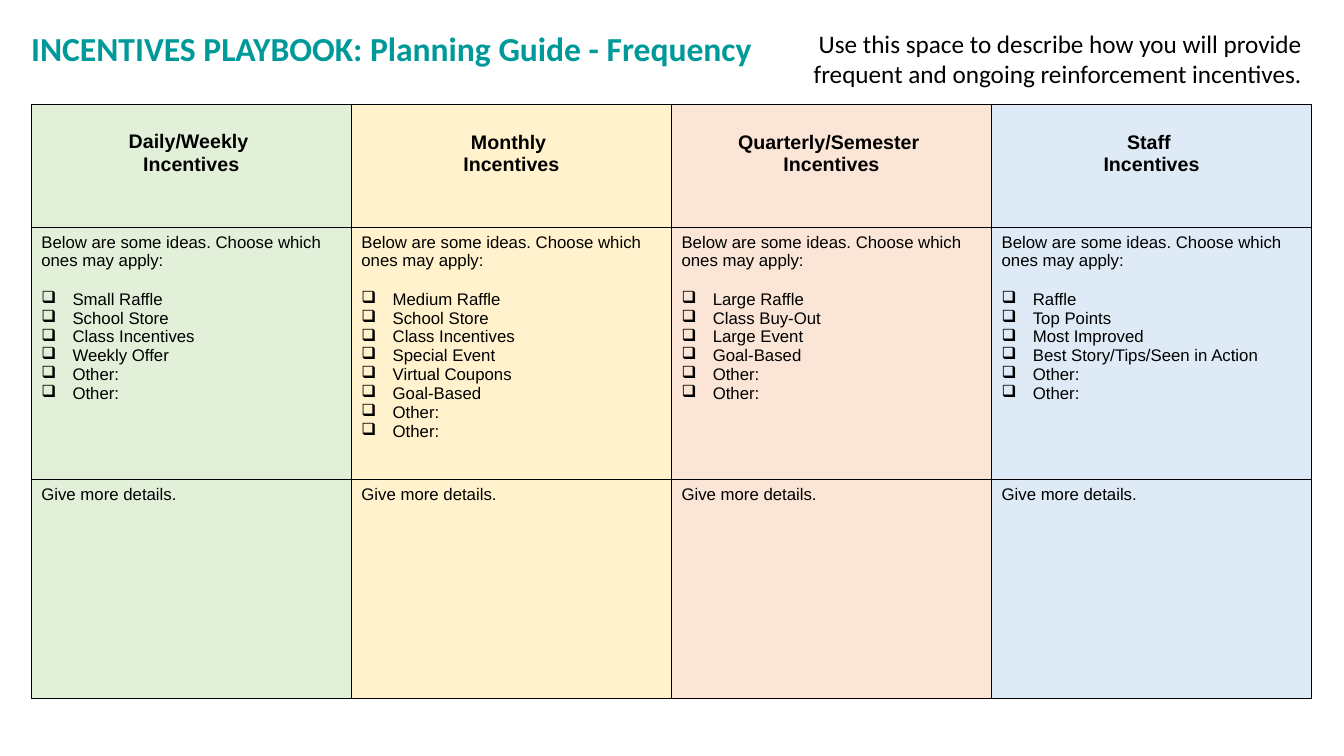
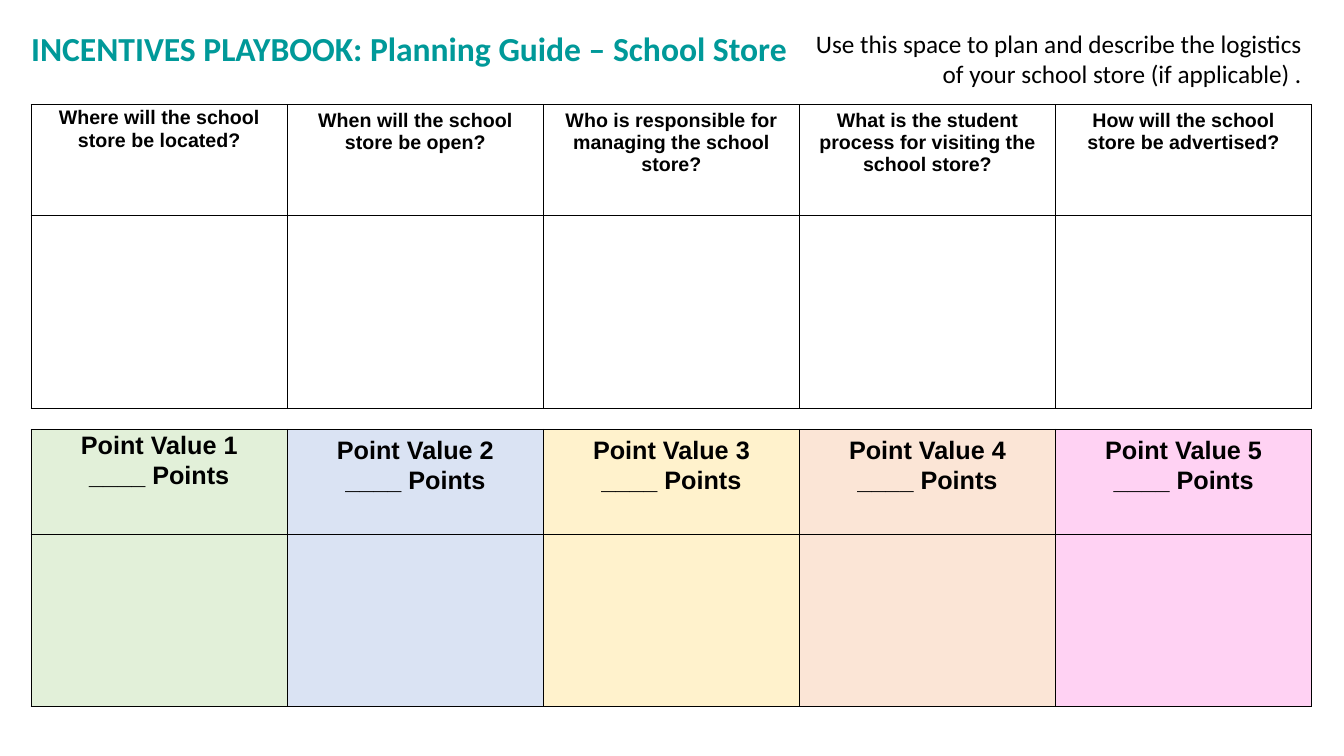
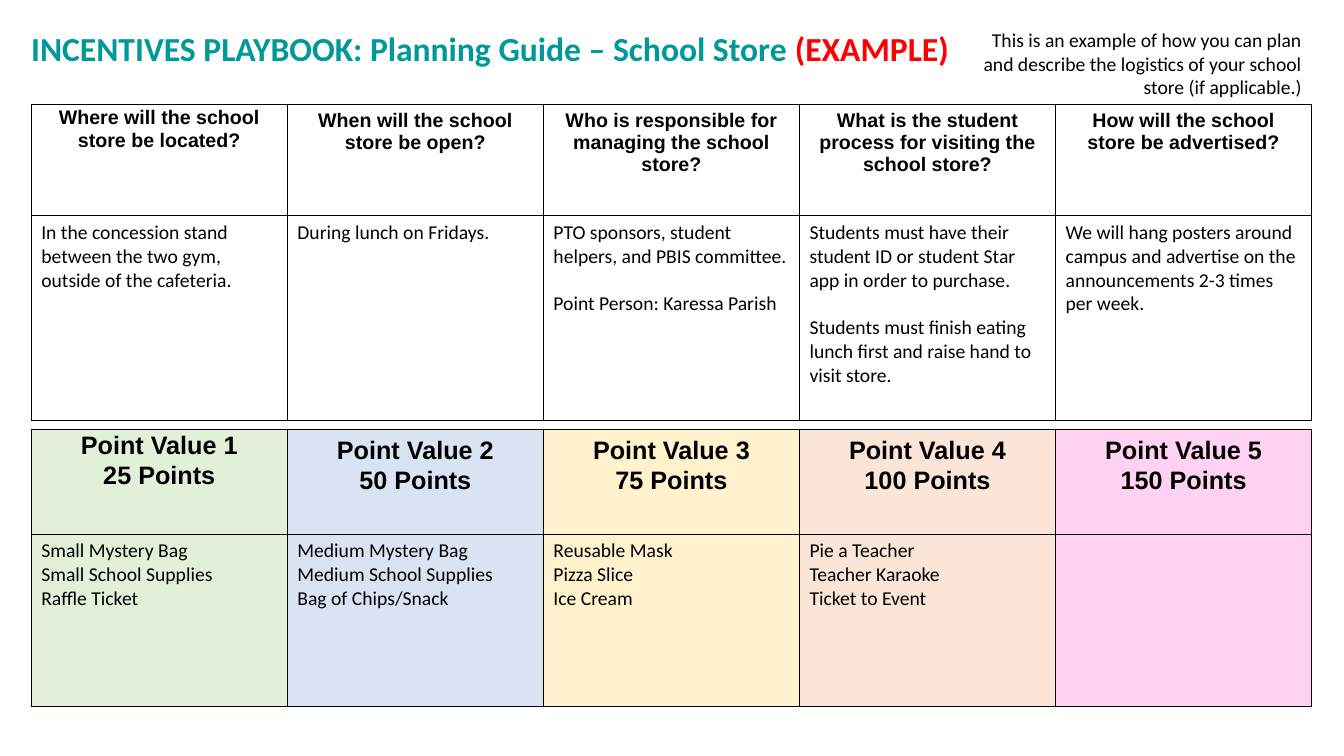
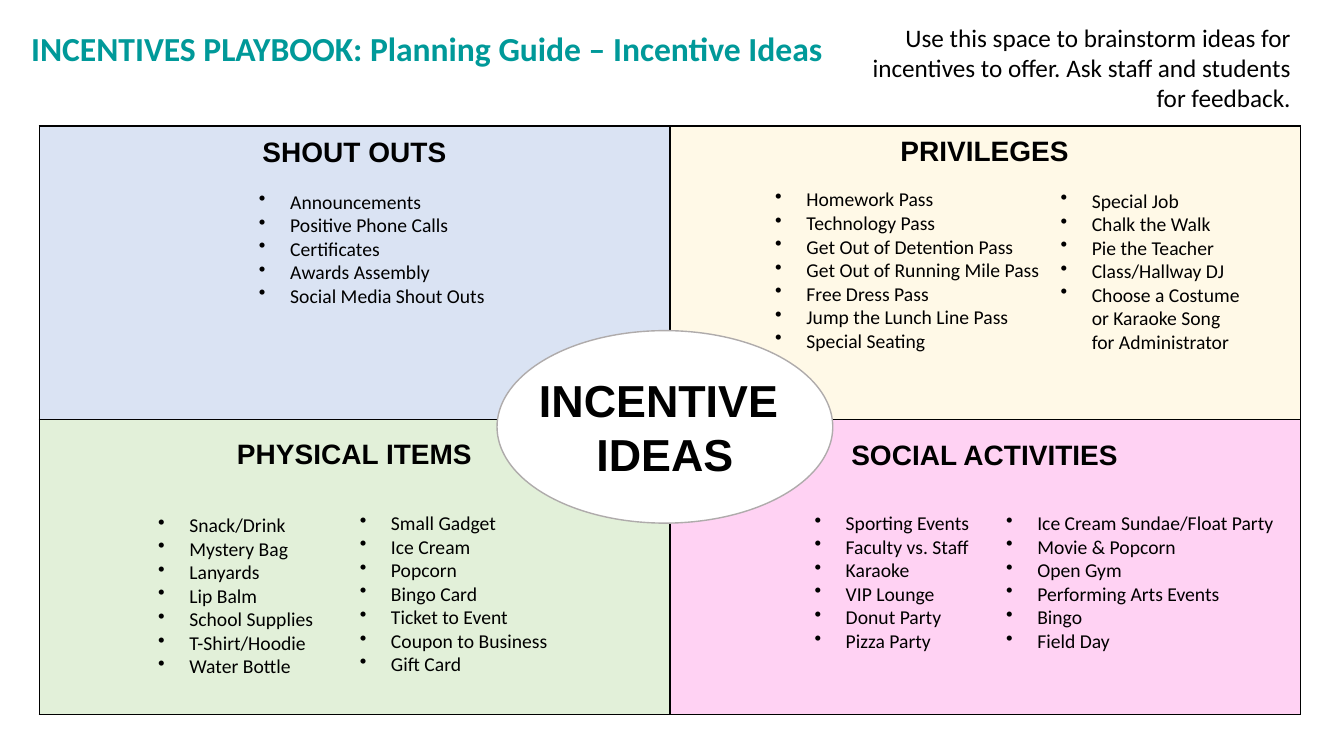
from lxml import etree
from pptx import Presentation
from pptx.dml.color import RGBColor
from pptx.enum import shapes, text
from pptx.oxml import ns
from pptx.util import Inches, Pt

# Shared look
WIDTH, HEIGHT = 13.33, 7.5
COLORS = {"teal": "009999", "red": "FF0000", "black": "000000", "white": "FFFFFF",
          "grey": "AFABAB", "green": "E2F0D9", "yellow": "FFF2CC", "peach": "FBE5D6",
          "sky": "DEEBF7", "blue": "DAE3F3", "pink": "FF33CC", "gold": "FFE699"}
OPACITY = {"pink": 22, "gold": 23}
LEFT, CENTER, RIGHT = text.PP_ALIGN.LEFT, text.PP_ALIGN.CENTER, text.PP_ALIGN.RIGHT
INDENT = 0.31
TABLE_LEFT, TABLE_TOP, TABLE_WIDTH = 0.31, 1.04, 12.7
CELL_MARGINS = (0.1, 0.05, 0.1, 0.05)
FIRST_MARGINS = (0.07, 0, 0.07, 0)


def style(name, size, bold=False, color="black", align=LEFT, spacing=None, gap=0, bullet=None):
    return {"font": {"name": name, "size": Pt(size), "bold": bold}, "color": color,
            "para": {"alignment": align, "line_spacing": spacing, "space_after": Pt(gap)},
            "bullet": bullet}


TITLE = style("Calibri", 24, True, "teal")
EXAMPLE = style("Calibri", 24, True, "red")
GUIDE = style("Calibri", 18, align=RIGHT)
SMALL_GUIDE = style("Calibri", 14, align=RIGHT)
HEADER = style("Arial", 14, True, align=CENTER)
LOOSE_HEADER = style("Arial", 14, True, align=CENTER, spacing=1.07)
POINTS = style("Arial", 18, True, align=CENTER, spacing=1.07)
INTRO = style("Arial", 12, gap=14)
DETAIL = style("Arial", 12)
CHECK = style("Arial", 12, bullet="❑")
ANSWER = style("Calibri", 14, gap=17)
PRIZE = style("Calibri", 14)
IDEA = style("Calibri", 14, bullet="•")
QUADRANT = style("Arial", 20, True, align=CENTER)
HUB = style("Arial", 32, True, align=CENTER)

# Content
TITLE_START = "INCENTIVES PLAYBOOK: Planning Guide "
FREQUENCIES = [
    ("Daily/Weekly ", "green", ["Small Raffle", "School Store", "Class Incentives", "Weekly Offer"]),
    ("Monthly ", "yellow", ["Medium Raffle", "School Store", "Class Incentives", "Special Event",
                            "Virtual Coupons", "Goal-Based"]),
    ("Quarterly/Semester ", "peach", ["Large Raffle", "Class Buy-Out", "Large Event", "Goal-Based"]),
    ("Staff ", "sky", ["Raffle", "Top Points", "Most Improved", "Best Story/Tips/Seen in Action"]),
]
QUESTIONS = ["Where will the school store be located?", "When will the school store be open?",
             "Who is responsible for managing the school store?",
             "What is the student process for visiting the school store?",
             "How will the school store be advertised?"]
ANSWERS = [
    ["In the concession stand between the two gym, outside of the cafeteria."],
    ["During lunch on Fridays."],
    ["PTO sponsors, student helpers, and PBIS committee.", "Point Person: Karessa Parish"],
    ["Students must have their student ID or student Star app in order to purchase.",
     "Students must finish eating lunch first and raise hand to visit store."],
    ["We will hang posters around campus and advertise on the announcements 2-3 times per week."],
]
POINT_FILLS = ["green", "blue", "yellow", "peach", "pink"]
PRIZES = [
    ["Small Mystery Bag", "Small School Supplies", "Raffle Ticket"],
    ["Medium Mystery Bag", "Medium School Supplies", "Bag of Chips/Snack"],
    ["Reusable Mask", "Pizza Slice", "Ice Cream"],
    ["Pie a Teacher", "Teacher Karaoke", "Ticket to Event"],
    [],
]
EMPTY = [[] for _ in QUESTIONS]
STORES = [
    {"title": "– School Store", "example": "", "question_rows": (1.1, 1.91),
     "guide": "Use this space to plan and describe the logistics of your school store (if applicable) .",
     "guide_style": GUIDE, "guide_box": (7.74, 0.23, 5.27, 0.71),
     "answers": EMPTY, "points": ["____"] * 5, "prizes": EMPTY},
    {"title": "– School Store ", "example": "(EXAMPLE)", "question_rows": (1.1, 2.03),
     "guide": "This is an example of how you can plan and describe the logistics of your "
              "school store (if applicable.)",
     "guide_style": SMALL_GUIDE, "guide_box": (9.43, 0.23, 3.58, 0.81),
     "answers": ANSWERS, "points": [25, 50, 75, 100, 150], "prizes": PRIZES},
]
QUADRANT_FILLS = [["blue", "gold"], ["green", "pink"]]
QUADRANTS = [("SHOUT OUTS", 0.39, 1.29), ("PRIVILEGES", 6.64, 1.28),
             ("PHYSICAL ITEMS", 0.39, 4.28), ("SOCIAL ACTIVITIES", 6.64, 4.29)]
IDEA_LISTS = [  # left, top, width, ideas
    (2.47, 1.83, 2.72, ["Announcements", "Positive Phone Calls", "Certificates", "Awards Assembly",
                        "Social Media Shout Outs"]),
    (7.59, 1.81, 2.89, ["Homework Pass", "Technology Pass", "Get Out of Detention Pass",
                        "Get Out of Running Mile Pass", "Free Dress Pass",
                        "Jump the Lunch Line Pass", "Special Seating"]),
    (10.42, 1.82, 2.01, ["Special Job", "Chalk the Walk", "Pie the Teacher", "Class/Hallway DJ",
                         "Choose a Costume or Karaoke Song for Administrator"]),
    (1.47, 5.04, 2.01, ["Snack/Drink", "Mystery Bag", "Lanyards", "Lip Balm", "School Supplies",
                        "T-Shirt/Hoodie", "Water Bottle"]),
    (3.47, 5.02, 2.33, ["Small Gadget", "Ice Cream", "Popcorn", "Bingo Card", "Ticket to Event",
                        "Coupon to Business", "Gift Card"]),
    (9.88, 5.02, 2.9, ["Ice Cream Sundae/Float Party", "Movie & Popcorn", "Open Gym",
                       "Performing Arts Events", "Bingo", "Field Day"]),
    (7.98, 5.02, 2.01, ["Sporting Events", "Faculty vs. Staff", "Karaoke", "VIP Lounge",
                        "Donut Party", "Pizza Party"]),
]


# Text
def rgb(color):
    return RGBColor.from_string(COLORS[color])


def styled(lines, look):
    return [(line, look) for line in lines]


def add_span(para, words, look):
    span = para.add_run()
    span.text = words
    for key, value in look["font"].items():
        setattr(span.font, key, value)
    span.font.color.rgb = rgb(look["color"])


def write(frame, lines):
    for index, (words, look) in enumerate(lines):
        para = frame.add_paragraph() if index else frame.paragraphs[0]
        for key, value in look["para"].items():
            setattr(para, key, value)
        if look["bullet"]:
            props = para._p.get_or_add_pPr()
            props.set("marL", str(Inches(INDENT)))
            props.set("indent", str(-Inches(INDENT)))
            etree.SubElement(props, ns.qn("a:buChar")).set("char", look["bullet"])
        add_span(para, words, look)


def add_text(page, box, lines):
    frame = page.shapes.add_textbox(*map(Inches, box)).text_frame
    frame.word_wrap = True
    write(frame, lines)
    return frame


def add_page(deck, title, guide, guide_box, guide_style=GUIDE, example=""):
    page = deck.slides.add_slide(deck.slide_layouts[6])
    frame = add_text(page, (0.21, 0.23, 12.81, 0.81), [(TITLE_START + title, TITLE)])
    if example:
        add_span(frame.paragraphs[0], example, EXAMPLE)
    add_text(page, guide_box, [(guide, guide_style)])
    return page


# Tables: each cell is (lines, fill, margins)
def draw_cell(cell, lines, fill=None, margins=CELL_MARGINS):
    props = cell._tc.get_or_add_tcPr()
    for side in ("lnL", "lnR", "lnT", "lnB"):
        border = etree.SubElement(props, ns.qn("a:" + side), w=str(Pt(1)))
        solid = etree.SubElement(border, ns.qn("a:solidFill"))
        etree.SubElement(solid, ns.qn("a:srgbClr"), val=COLORS["black"])
    if fill:
        cell.fill.solid()
        cell.fill.fore_color.rgb = rgb(fill)
        if fill in OPACITY:
            tint = props.find(ns.qn("a:solidFill")).find(ns.qn("a:srgbClr"))
            etree.SubElement(tint, ns.qn("a:alpha"), val=str(OPACITY[fill] * 1000))
    else:
        cell.fill.background()
    for side, value in zip(("left", "top", "right", "bottom"), margins):
        setattr(cell, "margin_" + side, Inches(value))
    write(cell.text_frame, lines)


def add_grid(page, cells, heights, left=TABLE_LEFT, top=TABLE_TOP, width=TABLE_WIDTH):
    count = len(cells[0])
    table = page.shapes.add_table(len(cells), count, *map(Inches, (left, top, width, sum(heights)))).table
    table.first_row = table.horz_banding = False
    for column in table.columns:
        column.width = Inches(width / count)
    for row, height, parts in zip(table.rows, heights, cells):
        row.height = Inches(height)
        for cell, part in zip(row.cells, parts):
            draw_cell(cell, *part)


# Slides
def frequency_page(deck):
    page = add_page(deck, "- Frequency", "Use this space to describe how you will provide frequent "
                    "and ongoing reinforcement incentives.", (7.74, 0.23, 5.27, 0.71))
    headers, ideas, details = [], [], []
    for index, (period, fill, choices) in enumerate(FREQUENCIES):
        look, margins = (HEADER, (0.1, 0.27, 0.1, 0.05)) if index else (LOOSE_HEADER, (0.07, 0.24, 0.07, 0))
        headers.append((styled([period, "Incentives"], look), fill, margins))
        intro = ("Below are some ideas. Choose which ones may apply:", INTRO)
        ideas.append(([intro] + styled(choices + ["Other:"] * 2, CHECK), fill))
        details.append(([("Give more details.", DETAIL)], fill))
    add_grid(page, [headers, ideas, details], (1.22, 2.5, 2.17))


def store_page(deck, store):
    page = add_page(deck, store["title"], store["guide"], store["guide_box"],
                    store["guide_style"], store["example"])
    margins = [FIRST_MARGINS] + [CELL_MARGINS] * 4
    looks = [LOOSE_HEADER] + [HEADER] * 4
    questions = [([(words, look)], None, edge) for words, look, edge in zip(QUESTIONS, looks, margins)]
    answers = [(styled(lines, ANSWER),) for lines in store["answers"]]
    add_grid(page, [questions, answers], store["question_rows"])
    values = [(styled([f"Point Value {number}", f"{points} Points"], POINTS), fill, edge)
              for number, (points, fill, edge) in enumerate(zip(store["points"], POINT_FILLS, margins), 1)]
    prizes = [(styled(lines, PRIZE), fill) for lines, fill in zip(store["prizes"], POINT_FILLS)]
    add_grid(page, [values, prizes], (1.04, 1.71), top=4.26)


def ideas_page(deck):
    page = add_page(deck, "– Incentive Ideas", "Use this space to brainstorm ideas for incentives to "
                    "offer. Ask staff and students for feedback.", (8.34, 0.17, 4.56, 1.01))
    add_grid(page, [[([], fill) for fill in row] for row in QUADRANT_FILLS], (2.91, 2.93),
             left=0.39, top=1.25, width=12.51)
    hub = page.shapes.add_shape(shapes.MSO_SHAPE.OVAL, *map(Inches, (4.93, 3.28, 3.33, 1.91)))
    hub.shadow.inherit = False
    hub.fill.solid()
    hub.fill.fore_color.rgb = rgb("white")
    hub.line.color.rgb = rgb("grey")
    hub.line.width = Pt(1)
    hub.text_frame.word_wrap = False
    hub.text_frame.vertical_anchor = text.MSO_ANCHOR.MIDDLE
    write(hub.text_frame, styled(["INCENTIVE ", "IDEAS"], HUB))
    for name, left, top in QUADRANTS:
        add_text(page, (left, top, 6.25, 0.74), [(name, QUADRANT)])
    for left, top, width, ideas in IDEA_LISTS:
        add_text(page, (left, top, width, 1.99), styled(ideas, IDEA))


def main():
    deck = Presentation()
    deck.slide_width, deck.slide_height = Inches(WIDTH), Inches(HEIGHT)
    frequency_page(deck)
    for store in STORES:
        store_page(deck, store)
    ideas_page(deck)
    deck.save("out.pptx")


if __name__ == "__main__":
    main()
